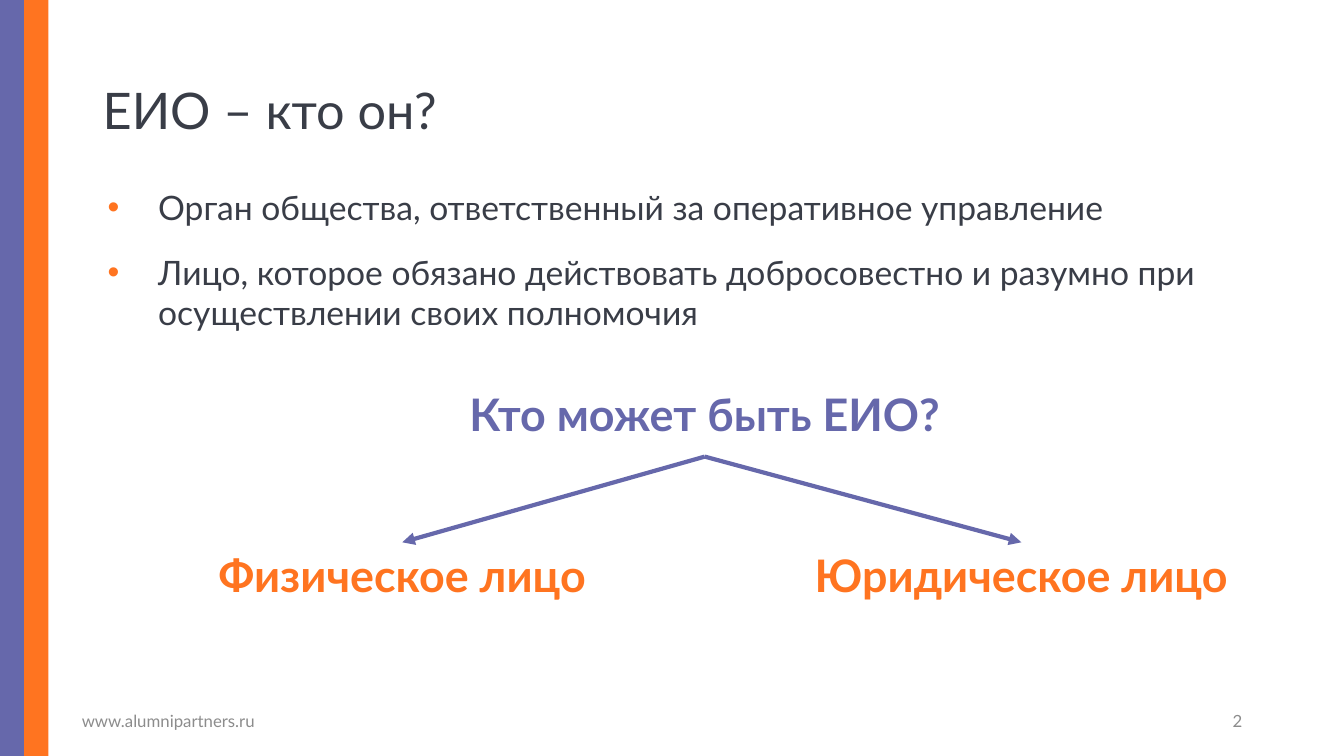
from dataclasses import dataclass

import pptx
import pptx.dml.color
import pptx.enum.shapes
import pptx.enum.text
import pptx.oxml.ns
import pptx.util
from lxml import etree

Inches = pptx.util.Inches
Pt = pptx.util.Pt
ALIGN = pptx.enum.text.PP_ALIGN
ANCHOR = pptx.enum.text.MSO_ANCHOR


@dataclass(frozen=True)
class Theme:
    font: str = "Lato"
    violet: str = "6668AB"
    orange: str = "FF7420"
    ink: str = "393D47"
    gray: str = "8C8C8C"
    title_size: int = 36
    branch_size: int = 32
    body_size: int = 24
    footer_size: int = 12


THEME = Theme()


def rgb(color):
    return pptx.dml.color.RGBColor.from_string(color)


def add_child(parent, tag, **attributes):
    child = etree.SubElement(parent, pptx.oxml.ns.qn(tag))
    for key, value in attributes.items():
        child.set(key, value)
    return child


def add_bullet(paragraph, color):
    properties = paragraph._p.get_or_add_pPr()
    indent = Inches(0.5)
    properties.set("marL", str(indent))
    properties.set("indent", str(-indent))
    add_child(add_child(properties, "a:buClr"), "a:srgbClr", val=color)
    add_child(properties, "a:buFont", typeface="Arial")
    add_child(properties, "a:buChar", char="•")


def add_text(slide, box, *lines, size, color, bold=False, align=ALIGN.LEFT,
             anchor=ANCHOR.MIDDLE, bullet=None, line_spacing=1.0, gap=0):
    """Put one paragraph per line in the box; gap is the points between them."""
    text_box = slide.shapes.add_textbox(*map(Inches, box))
    frame = text_box.text_frame
    frame.word_wrap = True
    frame.vertical_anchor = anchor
    for number, line in enumerate(lines):
        paragraph = frame.add_paragraph() if number else frame.paragraphs[0]
        paragraph.alignment = align
        paragraph.line_spacing = line_spacing
        if number:
            paragraph.space_before = Pt(gap)
        if bullet:
            add_bullet(paragraph, bullet)
        run = paragraph.add_run()
        run.text = line
        run.font.name = THEME.font
        run.font.size = Pt(size)
        run.font.bold = bold
        run.font.color.rgb = rgb(color)
    return text_box


def add_side_stripes(slide, box):
    left, top, width, height = box
    stripe_width = width / 2
    for number, color in enumerate((THEME.violet, THEME.orange)):
        stripe = slide.shapes.add_shape(
            pptx.enum.shapes.MSO_SHAPE.RECTANGLE,
            Inches(left + number * stripe_width), Inches(top),
            Inches(stripe_width), Inches(height))
        stripe.shadow.inherit = False
        stripe.fill.solid()
        stripe.fill.fore_color.rgb = rgb(color)
        stripe.line.fill.background()


def add_arrow(slide, source, target):
    """Join the bottom of source to the top of target."""
    arrow = slide.shapes.add_connector(
        pptx.enum.shapes.MSO_CONNECTOR.STRAIGHT, 0, 0, 0, 0)
    arrow.begin_connect(source, 2)
    arrow.end_connect(target, 0)
    arrow.line.color.rgb = rgb(THEME.violet)
    arrow.line.width = Pt(3)
    add_child(arrow.line._get_or_add_ln(), "a:tailEnd", type="triangle")
    add_child(arrow._element.spPr, "a:effectLst")


def add_branches(slide, box, question, answers):
    left, top, width, height = box
    branch_width = width / len(answers)
    answer_height = 0.65
    style = dict(size=THEME.branch_size, bold=True, align=ALIGN.CENTER)
    root = add_text(slide, (left + 3, top, branch_width, 0.85), question,
                    color=THEME.violet, **style)
    for number, answer in enumerate(answers):
        place = (left + number * branch_width, top + height - answer_height,
                 branch_width, answer_height)
        leaf = add_text(slide, place, answer, color=THEME.orange, **style)
        add_arrow(slide, root, leaf)


def add_footer(slide, box, site, page):
    left, top, width, height = box
    style = dict(size=THEME.footer_size, color=THEME.gray)
    add_text(slide, (left, top, 4.5, height), site, align=ALIGN.CENTER, **style)
    add_text(slide, (left + width - 3, top, 3, height), page,
             align=ALIGN.RIGHT, **style)


def main():
    deck = pptx.Presentation()
    deck.slide_width, deck.slide_height = Inches(13.33), Inches(7.5)
    slide = deck.slides.add_slide(deck.slide_layouts[6])

    add_side_stripes(slide, (0, 0, 0.48, 7.5))
    add_text(slide, (0.92, 0.4, 9.49, 1.45), "ЕИО – кто он?",
             size=THEME.title_size, color=THEME.ink, line_spacing=0.9)
    add_text(slide, (0.97, 1.8, 11.65, 1.58),
             "Орган общества, ответственный за оперативное управление",
             "Лицо, которое обязано действовать добросовестно и разумно при "
             "осуществлении своих полномочия",
             size=THEME.body_size, color=THEME.ink, anchor=ANCHOR.TOP,
             bullet=THEME.orange, gap=18)
    add_branches(slide, (0.92, 3.68, 12.28, 2.35), "Кто может быть ЕИО?",
                 ("Физическое лицо", "Юридическое лицо"))
    add_footer(slide, (-0.58, 6.95, 13, 0.4), "www.alumnipartners.ru", "2")

    deck.save("out.pptx")


if __name__ == "__main__":
    main()
